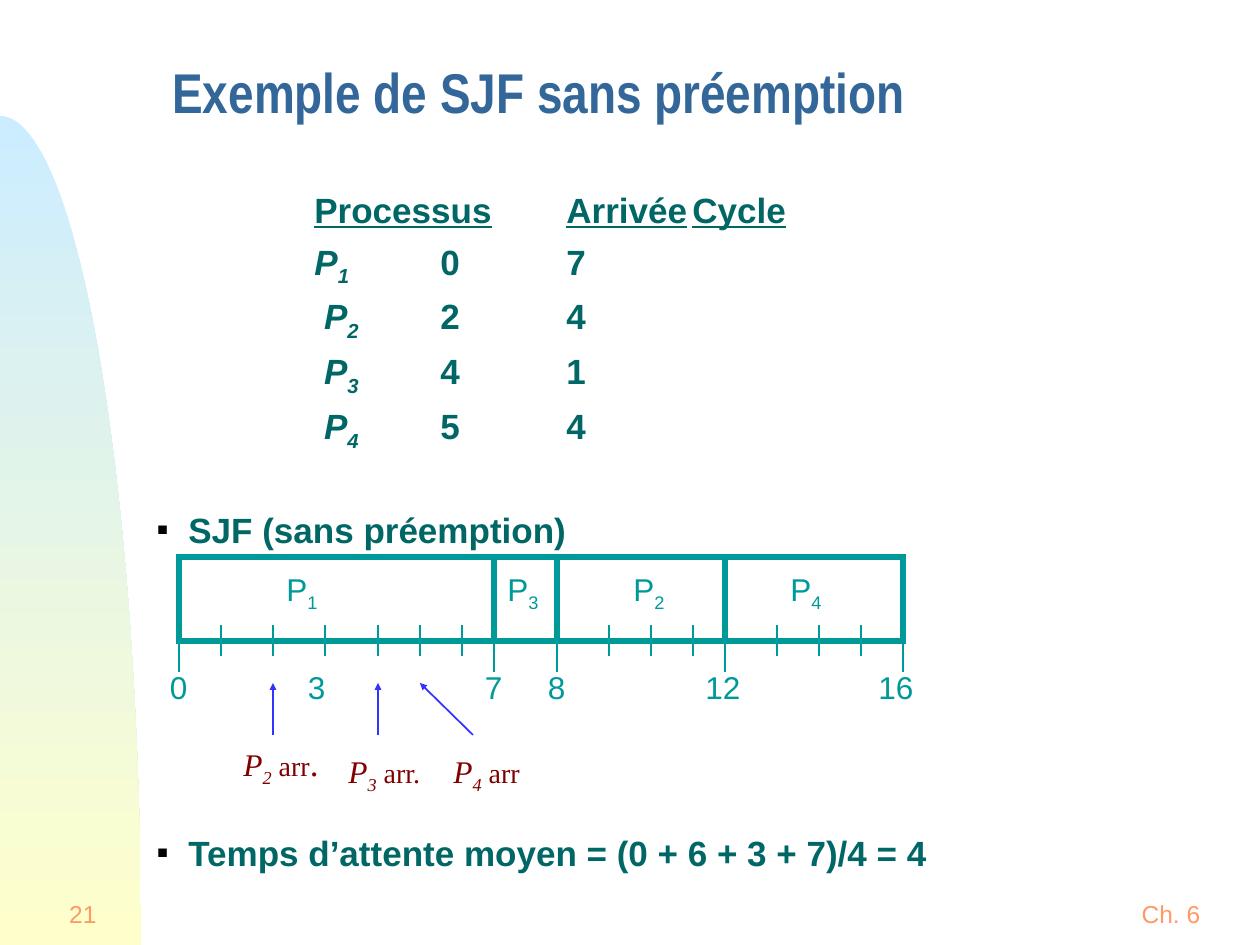
from dataclasses import dataclass, field
from math import cos, pi, sin
from typing import Any

from lxml.etree import SubElement
from pptx import Presentation
from pptx.dml.color import RGBColor
from pptx.enum.shapes import MSO_CONNECTOR as Link, MSO_SHAPE as Preset
from pptx.enum.text import MSO_ANCHOR as Anchor, PP_ALIGN as Align
from pptx.oxml.ns import qn
from pptx.util import Emu, Pt

SCALE = 914400 / 126
TEAL, DARK_TEAL, BLUE, MAROON, ORANGE = "009999", "006666", "3333FF", "800000", "FF9966"
BODY = {"name": "Arial", "size": Pt(20), "bold": True}
CHART = {"name": "Arial", "size": Pt(18)}
ARRIVAL = {"name": "Times New Roman", "size": Pt(18)}
TITLE = {"name": "Arial Narrow", "size": Pt(32), "bold": True}
FOOTER = {"name": "Arial", "size": Pt(14)}
ITALIC, UNDERLINE = {"italic": True}, {"underline": True}
COLUMN_STOPS = range(157, 536, 126)


@dataclass
class Piece:
    text: str
    style: dict[str, Any] = field(default_factory=dict)
    sub: bool = False


@dataclass
class Line:
    pieces: list[Piece]
    before: int = 0
    bullet: bool = False
    columns: bool = False


@dataclass
class Box:
    left: int
    top: int
    width: int
    height: int


@dataclass
class Arrival:
    number: str
    label: Box
    start: int
    end: int
    tail: list[Piece]


def px(length: float) -> Emu:
    return Emu(round(length * SCALE))


def colour(value: str) -> RGBColor:
    return RGBColor.from_string(value)


def apply(target: Any, values: dict[str, Any]) -> None:
    for name, value in values.items():
        setattr(target, name, value)


def add_bullet(props: Any) -> None:
    props.set("marL", str(px(31)))
    props.set("indent", str(px(-31)))
    SubElement(SubElement(props, qn("a:buClr")), qn("a:srgbClr"), val="010000")
    SubElement(props, qn("a:buSzPct"), val="50000")
    SubElement(props, qn("a:buFont"), typeface="Arial")
    SubElement(props, qn("a:buChar"), char="■")


def add_columns(props: Any) -> None:
    stops = SubElement(props, qn("a:tabLst"))
    for stop in COLUMN_STOPS:
        SubElement(stops, qn("a:tab"), pos=str(px(stop)), algn="l")


def add_text(slide: Any, box: Box, lines: list[Line], style: dict[str, Any], ink: str,
             align: Align = Align.LEFT, anchor: Anchor = Anchor.MIDDLE,
             wrap: bool = True, spacing: float = 1.0) -> None:
    frame = slide.shapes.add_textbox(
        px(box.left), px(box.top), px(box.width), px(box.height)).text_frame
    apply(frame, {"word_wrap": wrap, "vertical_anchor": anchor})
    for index, line in enumerate(lines):
        paragraph = frame.add_paragraph() if index else frame.paragraphs[0]
        apply(paragraph, {"alignment": align, "line_spacing": spacing,
                          "space_before": px(line.before)})
        props = paragraph._p.get_or_add_pPr()
        if line.bullet:
            add_bullet(props)
        if line.columns:
            add_columns(props)
        for piece in line.pieces:
            run = paragraph.add_run()
            run.text = piece.text
            apply(run.font, style | piece.style)
            run.font.color.rgb = colour(ink)
            if piece.sub:
                run._r.get_or_add_rPr().set("baseline", "-25000")


def add_line(slide: Any, start: tuple[int, int], end: tuple[int, int],
             ink: str, weight: float, arrow: bool = False) -> None:
    connector = slide.shapes.add_connector(Link.STRAIGHT, *map(px, start + end))
    connector.line.width = Pt(weight)
    connector.line.color.rgb = colour(ink)
    if arrow:
        SubElement(connector.line._get_or_add_ln(), qn("a:tailEnd"),
                   type="triangle", w="sm", len="sm")
    SubElement(connector._element.spPr, qn("a:effectLst"))


def add_side_curve(slide: Any) -> None:
    width, top, bottom, steps = 141, 116, 945, 60
    angles = [pi / 2 * step / steps for step in range(steps + 1)]
    points = [(px(width * sin(a)), px(bottom - (bottom - top) * cos(a))) for a in angles]
    outline = slide.shapes.build_freeform(0, px(top))
    outline.add_line_segments(points[1:] + [(0, px(bottom))], close=True)
    curve = outline.convert_to_shape()
    curve.shadow.inherit = False
    curve.line.fill.background()
    curve.fill.gradient()
    curve.fill.gradient_angle = 270
    for stop, shade in zip(curve.fill.gradient_stops, ("CCECFF", "FFFFCC")):
        stop.color.rgb = colour(shade)


def process_name(number: str, style: dict[str, Any]) -> list[Piece]:
    return [Piece("P", style), Piece(number, style, sub=True)]


def add_body(slide: Any) -> None:
    lines = [Line([Piece("\t"), Piece("Processus", UNDERLINE), Piece("\t"),
                   Piece("Arrivée", UNDERLINE), Piece("\t"), Piece("Cycle", UNDERLINE)],
                  columns=True)]
    for number, arrival, cycle, lead, before in (
            ("1", 0, 7, "\t", 10), ("2", 2, 4, "\t ", 7),
            ("3", 4, 1, "\t ", 7), ("4", 5, 4, "\t ", 7)):
        lines.append(Line([Piece(lead), *process_name(number, ITALIC),
                           Piece(f"\t{arrival}\t{cycle}")], before, columns=True))
    lines.append(Line([Piece("SJF (sans préemption)")], 56, bullet=True))
    lines.append(Line([Piece("Temps d’attente moyen = (0 + 6 + 3 + 7)/4 = 4")], 281, bullet=True))
    add_text(slide, Box(145, 182, 969, 622), lines, BODY, DARK_TEAL, anchor=Anchor.TOP)


def add_gantt(slide: Any) -> None:
    top, base, left, right = 557, 641, 179, 903
    splits = (494, 557, 725)
    bar = slide.shapes.add_shape(
        Preset.RECTANGLE, px(left), px(top), px(right - left), px(base - top))
    bar.shadow.inherit = False
    bar.fill.solid()
    bar.fill.fore_color.rgb = colour("FFFFFF")
    bar.line.color.rgb = colour(TEAL)
    bar.line.width = Pt(3)
    SubElement(bar.line._get_or_add_ln(), qn("a:miter"), lim="800000")
    for x in splits:
        add_line(slide, (x, top), (x, base), TEAL, 3)
    for x in (left, *splits, right):
        add_line(slide, (x, base), (x, 672), TEAL, 0.75)
    for x in (221, 273, 325, 378, 420, 462, 609, 651, 693, 777, 819, 861):
        add_line(slide, (x, 625), (x, 656), TEAL, 0.75)
    names = [(x, 567, 58, process_name(number, {})) for x, number in
             ((273, "1"), (494, "3"), (620, "2"), (777, "4"))]
    times = [(x, 662, 43 if len(time) == 1 else 60, [Piece(time)]) for x, time in
             ((157, "0"), (295, "3"), (472, "7"), (535, "8"), (693, "12"), (866, "16"))]
    for x, y, width, pieces in names + times:
        add_text(slide, Box(x, y, width, 50), [Line(pieces)], CHART, TEAL,
                 Align.CENTER, wrap=False)


def add_arrivals(slide: Any) -> None:
    small, large = {"size": Pt(16)}, {"size": Pt(20)}
    for arrival in (
        Arrival("2", Box(231, 735, 105, 54), 273, 273, [Piece(" arr", small), Piece(".", large)]),
        Arrival("3", Box(336, 746, 105, 50), 378, 378, [Piece(" arr.", small)]),
        Arrival("4", Box(441, 746, 116, 50), 473, 420, [Piece(" arr", small)]),
    ):
        add_line(slide, (arrival.start, 735), (arrival.end, 683), BLUE, 1, arrow=True)
        pieces = process_name(arrival.number, ITALIC) + arrival.tail
        add_text(slide, arrival.label, [Line(pieces)], ARRIVAL, MAROON, anchor=Anchor.TOP)


def main() -> None:
    deck = Presentation()
    apply(deck, {"slide_width": px(1260), "slide_height": px(945)})
    slide = deck.slides.add_slide(deck.slide_layouts[6])
    add_side_curve(slide)
    add_text(slide, Box(1113, 882, 116, 63), [Line([Piece("Ch. 6")])], FOOTER, ORANGE,
             Align.CENTER, wrap=False)
    add_text(slide, Box(21, 882, 88, 63), [Line([Piece("21")])], FOOTER, ORANGE,
             Align.RIGHT, wrap=False)
    add_body(slide)
    add_text(slide, Box(160, 68, 949, 63), [Line([Piece("Exemple de SJF sans préemption")])],
             TITLE, "336699", spacing=0.7)
    add_gantt(slide)
    add_arrivals(slide)
    deck.save("out.pptx")


if __name__ == "__main__":
    main()
